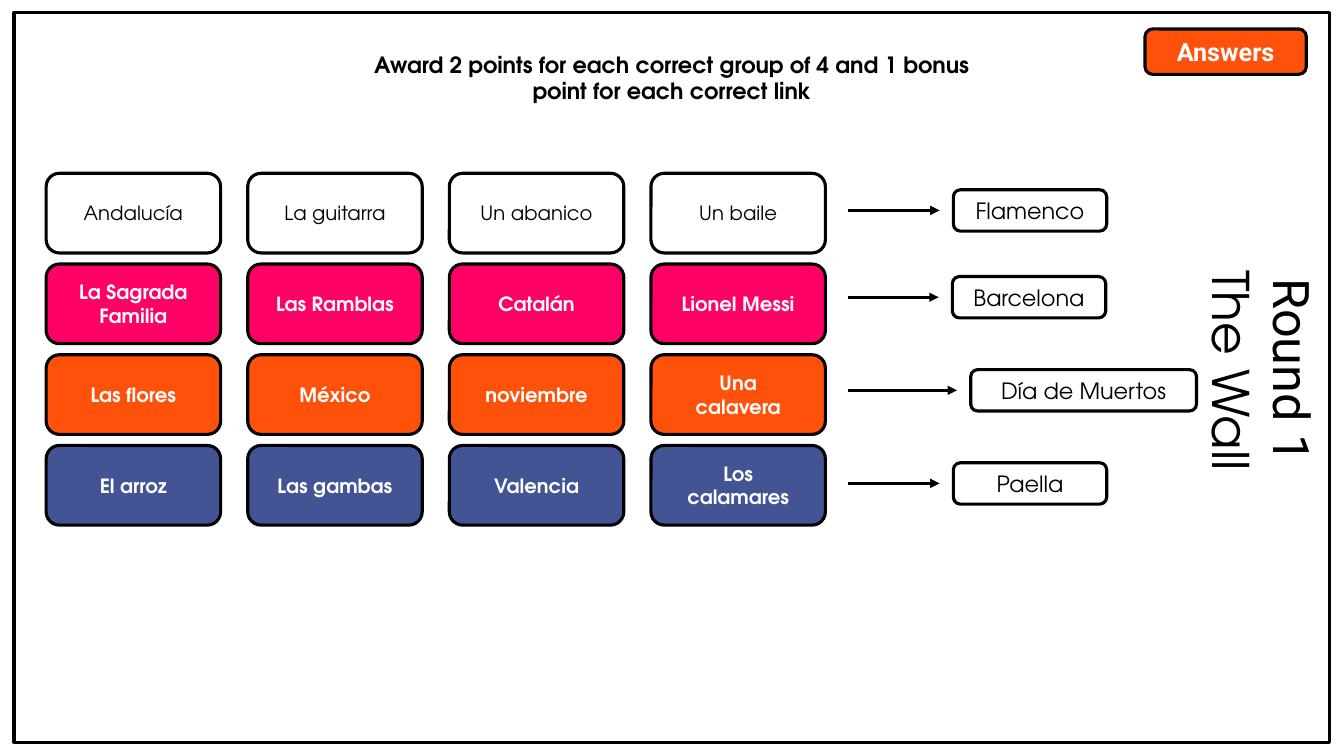
from dataclasses import dataclass

from lxml import etree
from pptx import Presentation
from pptx.dml.color import RGBColor
from pptx.enum.shapes import MSO_CONNECTOR, MSO_SHAPE
from pptx.enum.text import MSO_ANCHOR, PP_ALIGN
from pptx.oxml.ns import qn
from pptx.shapes.autoshape import Shape
from pptx.slide import Slide
from pptx.util import Pt

RECTANGLE = MSO_SHAPE.RECTANGLE
ROUNDED = MSO_SHAPE.ROUNDED_RECTANGLE
STRAIGHT = MSO_CONNECTOR.STRAIGHT
CENTER = PP_ALIGN.CENTER
MIDDLE = MSO_ANCHOR.MIDDLE

COLORS = {
    "black": "000000",
    "white": "FFFFFF",
    "pink": "FF0066",
    "orange": "FF510A",
    "blue": "435494",
}
GEOMETRIC = "TeX Gyre Adventor"
ROBOTO = "Roboto"
OUTLINE = 2.25

CARD_LEFT, CARD_TOP = 33, 123.8
CARD_WIDTH, CARD_HEIGHT = 124.6, 56.9
CARD_STEP_X, CARD_STEP_Y = 144, 64.8
CARD_INSET = 17.4
ARROW_LEFT, ARROW_GAP = 606, 9.8
LINK_HEIGHT = 29.5


@dataclass
class Area:
    left: float
    top: float
    width: float
    height: float

    def lengths(self) -> tuple[Pt, Pt, Pt, Pt]:
        return Pt(self.left), Pt(self.top), Pt(self.width), Pt(self.height)


@dataclass
class Style:
    size: float
    font: str = GEOMETRIC
    color: str = "black"
    bold: bool = False


@dataclass
class Group:
    """Four linked clues in one row, with the link that joins them."""
    clues: list[str]
    fill: str | None
    link: str
    link_left: float
    link_middle: float
    link_width: float = 109.5


GROUPS = [
    Group(["Andalucía", "La guitarra", "Un abanico", "Un baile"],
          None, "Flamenco", 681, 150.3),
    Group(["La Sagrada Familia", "Las Ramblas", "Catalán", "Lionel Messi"],
          "pink", "Barcelona", 680.3, 212.3),
    Group(["Las flores", "México", "noviembre", "Una calavera"],
          "orange", "Día de Muertos", 693.4, 278.8, 161.3),
    Group(["El arroz", "Las gambas", "Valencia", "Los calamares"],
          "blue", "Paella", 681, 345.3),
]


def color(name: str) -> RGBColor:
    return RGBColor.from_string(COLORS[name])


def write(box: Shape, lines: list[str], styles: list[Style]) -> None:
    """Put one centred paragraph per line into the box."""
    frame = box.text_frame
    frame.word_wrap = True
    frame.vertical_anchor = MIDDLE
    frame.text = "\n".join(lines)
    for para, style in zip(frame.paragraphs, styles):
        para.alignment = CENTER
        for span in para.runs:
            span.font.size = Pt(style.size)
            span.font.name = style.font
            span.font.bold = style.bold
            span.font.color.rgb = color(style.color)


def add_outlined(page: Slide, kind: MSO_SHAPE, area: Area,
                 fill: str | None = None) -> Shape:
    box = page.shapes.add_shape(kind, *area.lengths())
    box.shadow.inherit = False
    if fill:
        box.fill.solid()
        box.fill.fore_color.rgb = color(fill)
    else:
        box.fill.background()
    box.line.color.rgb = color("black")
    box.line.width = Pt(OUTLINE)
    return box


def add_arrow(page: Slide, start: float, end: float, middle: float) -> None:
    arrow = page.shapes.add_connector(
        STRAIGHT, Pt(start), Pt(middle), Pt(end), Pt(middle))
    arrow.line.color.rgb = color("black")
    arrow.line.width = Pt(OUTLINE)
    line = arrow.line._get_or_add_ln()
    etree.SubElement(line, qn("a:tailEnd"), type="triangle")
    etree.SubElement(arrow._element.spPr, qn("a:effectLst"))


def add_group(page: Slide, row: int, group: Group) -> None:
    style = Style(14, color="white" if group.fill else "black",
                  bold=group.fill is not None)
    for column, clue in enumerate(group.clues):
        area = Area(CARD_LEFT + column * CARD_STEP_X,
                    CARD_TOP + row * CARD_STEP_Y, CARD_WIDTH, CARD_HEIGHT)
        card = add_outlined(page, ROUNDED, area, group.fill)
        write(card, [clue], [style])
        card.text_frame.margin_left = Pt(CARD_INSET)
        card.text_frame.margin_right = Pt(CARD_INSET)

    add_arrow(page, ARROW_LEFT, group.link_left - ARROW_GAP,
              group.link_middle)
    area = Area(group.link_left, group.link_middle - LINK_HEIGHT / 2,
                group.link_width, LINK_HEIGHT)
    write(add_outlined(page, ROUNDED, area), [group.link], [Style(16)])


def add_text(page: Slide, area: Area, lines: list[str],
             styles: list[Style]) -> Shape:
    box = page.shapes.add_textbox(*area.lengths())
    write(box, lines, styles)
    return box


def main() -> None:
    deck = Presentation()
    deck.slide_width, deck.slide_height = Pt(960), Pt(540)
    page = deck.slides.add_slide(deck.slide_layouts[6])

    add_outlined(page, RECTANGLE, Area(10, 8.9, 939.6, 521.3))
    for row, group in enumerate(GROUPS):
        add_group(page, row, group)

    title = add_text(page, Area(750.2, 217.4, 303.8, 94.3),
                     ["Round 1", "The Wall"], [Style(36, ROBOTO), Style(36)])
    title.rotation = 90

    answers = add_outlined(page, ROUNDED, Area(817.9, 20.7, 115.2, 32.4),
                           "orange")
    write(answers, ["Answers"], [Style(18, ROBOTO, "white", True)])
    add_text(page, Area(247.7, 29.8, 464.4, 51.1),
             ["Award 2 points for each correct group of 4 and 1 bonus "
              "point for each correct link"], [Style(16, bold=True)])

    deck.save("out.pptx")


if __name__ == "__main__":
    main()
